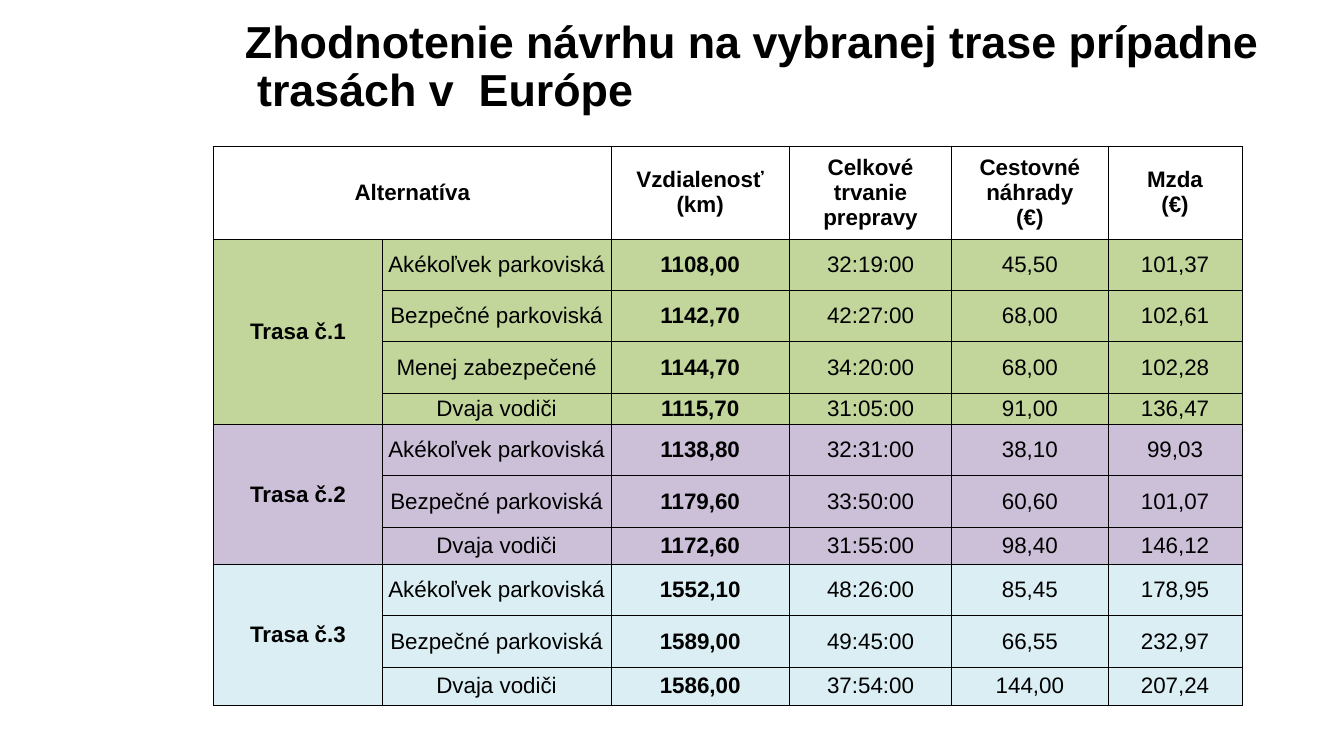
from dataclasses import dataclass

from lxml import etree
from pptx import Presentation
from pptx.dml.color import RGBColor
from pptx.enum import text
from pptx.oxml import ns
from pptx.util import Inches, Pt


@dataclass(frozen=True)
class Theme:
    font: str = "Arial"
    ink: str = "000000"
    title_size: int = 32
    table_size: int = 16
    border_width: float = 0.5
    route_fills: tuple = ("C2D69B", "CCC0D9", "DAEEF3")


theme = Theme()


def style_runs(para, size, bold):
    for span in para.runs:
        span.font.name = theme.font
        span.font.size = Pt(size)
        span.font.bold = bold
        span.font.color.rgb = RGBColor.from_string(theme.ink)


def style_cell(cell, bold, fill):
    cell.margin_left = cell.margin_right = cell.margin_top = cell.margin_bottom = 0
    cell.vertical_anchor = text.MSO_ANCHOR.MIDDLE
    for para in cell.text_frame.paragraphs:
        para.alignment = text.PP_ALIGN.CENTER
        style_runs(para, theme.table_size, bold)
    # Borders come before the fill in the cell properties
    properties = cell._tc.get_or_add_tcPr()
    for side in ("lnL", "lnR", "lnT", "lnB"):
        line = etree.SubElement(properties, ns.qn(f"a:{side}"), w=str(Pt(theme.border_width)))
        solid = etree.SubElement(line, ns.qn("a:solidFill"))
        etree.SubElement(solid, ns.qn("a:srgbClr"), val=theme.ink)
    if fill:
        cell.fill.solid()
        cell.fill.fore_color.rgb = RGBColor.from_string(fill)
    else:
        cell.fill.background()


# Page
deck = Presentation()
deck.slide_width, deck.slide_height = Inches(13.33), Inches(7.5)
page = deck.slides.add_slide(deck.slide_layouts[5])

# Title, with a hanging second line
title = page.shapes.title
title.left, title.top, title.width, title.height = Inches(1.96), 0, Inches(10.96), Inches(1.81)
frame = title.text_frame
frame.text = "Zhodnotenie návrhu na vybranej trase prípadne trasách v  Európe"
frame.word_wrap = True
frame.auto_size = text.MSO_AUTO_SIZE.NONE
frame.vertical_anchor = text.MSO_ANCHOR.MIDDLE
frame.margin_bottom = Inches(0.51)
para = frame.paragraphs[0]
para.alignment = text.PP_ALIGN.LEFT
para.line_spacing = 0.9
indents = para._p.get_or_add_pPr()
indents.set("marL", str(Inches(0.49)))
indents.set("indent", str(Inches(-0.12)))
style_runs(para, theme.title_size, True)

# Table contents
header = ["Alternatíva", "", "Vzdialenosť\v(km)", "Celkové trvanie prepravy",
          "Cestovné náhrady\n(€)", "Mzda\n(€)"]
any_parking, safe_parking, two_drivers = "Akékoľvek parkoviská", "Bezpečné parkoviská", "Dvaja vodiči"
routes = {
    "Trasa č.1": [
        (any_parking, "1108,00", "32:19:00", "45,50", "101,37"),
        (safe_parking, "1142,70", "42:27:00", "68,00", "102,61"),
        ("Menej zabezpečené", "1144,70", "34:20:00", "68,00", "102,28"),
        (two_drivers, "1115,70", "31:05:00", "91,00", "136,47"),
    ],
    "Trasa č.2": [
        (any_parking, "1138,80", "32:31:00", "38,10", "99,03"),
        (safe_parking, "1179,60", "33:50:00", "60,60", "101,07"),
        (two_drivers, "1172,60", "31:55:00", "98,40", "146,12"),
    ],
    "Trasa č.3": [
        (any_parking, "1552,10", "48:26:00", "85,45", "178,95"),
        (safe_parking, "1589,00", "49:45:00", "66,55", "232,97"),
        (two_drivers, "1586,00", "37:54:00", "144,00", "207,24"),
    ],
}
column_widths = [1.67, 2.27, 1.77, 1.61, 1.55, 1.33]
row_heights = [0.92, 0.51, 0.51, 0.51, 0.31, 0.51, 0.51, 0.37, 0.51, 0.51, 0.38]

# Table grid
table = page.shapes.add_table(len(row_heights), len(column_widths), Inches(2.12), Inches(1.45),
                              Inches(10.21), Inches(5.52)).table
table.first_row = table.horz_banding = False
for column, width in zip(table.columns, column_widths):
    column.width = Inches(width)
for row, height in zip(table.rows, row_heights):
    row.height = Inches(height)

# Header row
for index, label in enumerate(header):
    cell = table.cell(0, index)
    cell.text_frame.text = label
    style_cell(cell, True, None)
table.cell(0, 0).merge(table.cell(0, 1))

# One coloured block per route; route names and distances are bold
first = 1
for (route, variants), fill in zip(routes.items(), theme.route_fills):
    for offset, variant in enumerate(variants):
        for index, value in enumerate((route if offset == 0 else "", *variant)):
            cell = table.cell(first + offset, index)
            cell.text_frame.text = value
            style_cell(cell, index in (0, 2), fill)
    table.cell(first, 0).merge(table.cell(first + len(variants) - 1, 0))
    first += len(variants)

deck.save("out.pptx")
